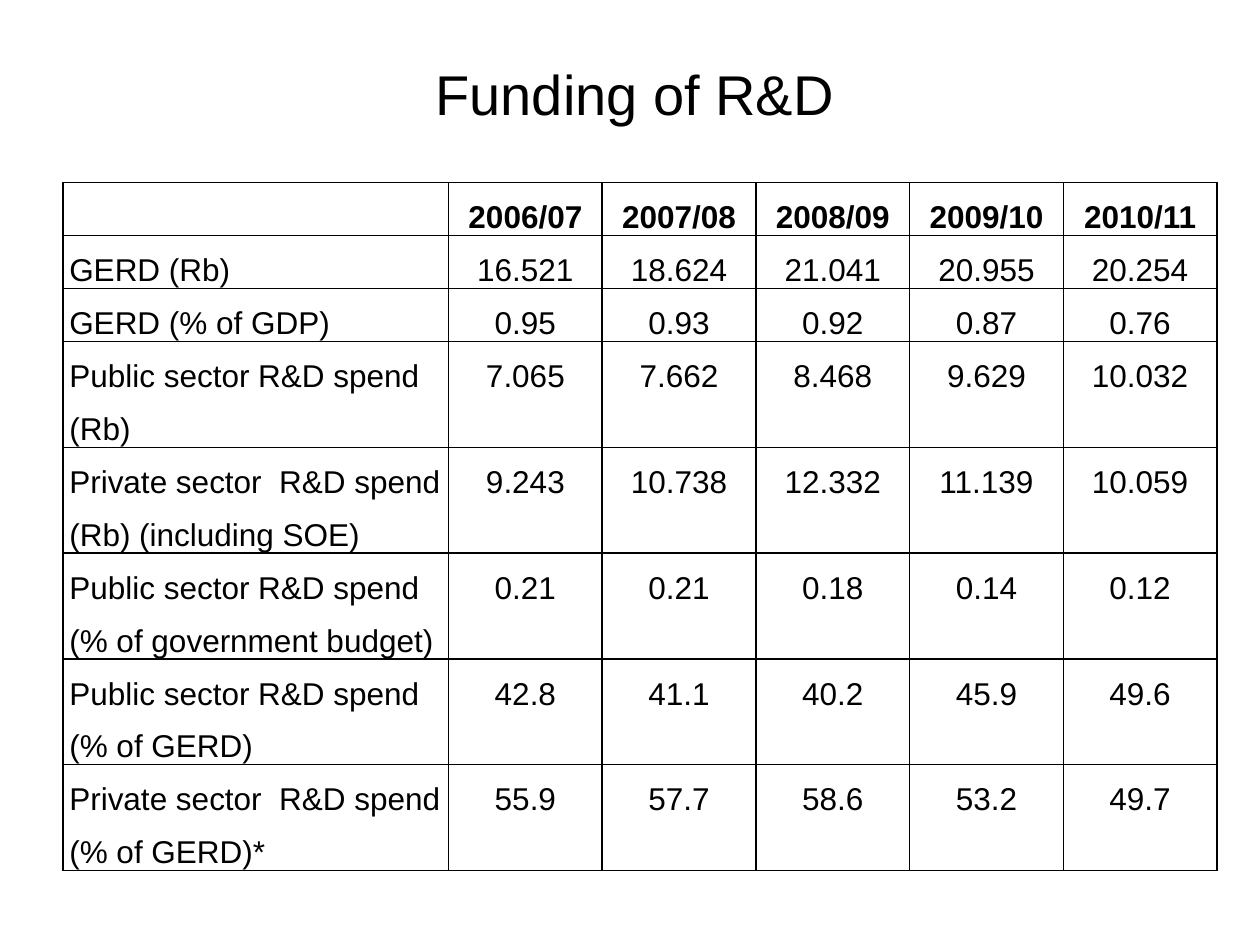
import dataclasses

import lxml.etree
import pptx
import pptx.dml.color
import pptx.enum.text
import pptx.oxml.ns
import pptx.util

Inches = pptx.util.Inches
Pt = pptx.util.Pt
ALIGN = pptx.enum.text.PP_ALIGN


@dataclasses.dataclass(frozen=True)
class Theme:
    font: str = "Arial"
    ink: str = "000000"
    paper: str = "FFFFFF"
    title_size: int = 32
    cell_size: int = 18
    cell_spacing: float = 1.5
    border: float = 1


def rgb(value):
    return pptx.dml.color.RGBColor.from_string(value)


def write(tf, text, *, font, size, color, bold=False, align=ALIGN.LEFT, spacing=None):
    """Put one formatted paragraph into a text frame."""
    p = tf.paragraphs[0]
    p.alignment = align
    p.line_spacing = spacing
    r = p.add_run()
    r.text = text
    r.font.name = font
    r.font.size = Pt(size)
    r.font.bold = bold
    r.font.color.rgb = rgb(color)


class SlideBuilder:
    def __init__(self, slide, theme):
        self.slide = slide
        self.theme = theme
        slide.background.fill.solid()
        slide.background.fill.fore_color.rgb = rgb(theme.paper)

    def title(self, text, left, top, width, height):
        sp = self.slide.shapes.title
        sp.left, sp.top = Inches(left), Inches(top)
        sp.width, sp.height = Inches(width), Inches(height)
        tf = sp.text_frame
        tf.word_wrap = True
        tf.auto_size = pptx.enum.text.MSO_AUTO_SIZE.NONE
        tf.vertical_anchor = pptx.enum.text.MSO_ANCHOR.MIDDLE
        write(tf, text, font=self.theme.font, size=self.theme.title_size,
              color=self.theme.ink, align=ALIGN.CENTER)

    def borders(self, cell):
        """Draw all four sides; line elements come before the cell fill."""
        qn = pptx.oxml.ns.qn
        props = cell._tc.get_or_add_tcPr()
        for i, side in enumerate(("a:lnL", "a:lnR", "a:lnT", "a:lnB")):
            line = lxml.etree.Element(qn(side), w=str(Pt(self.theme.border)))
            fill = lxml.etree.SubElement(line, qn("a:solidFill"))
            lxml.etree.SubElement(fill, qn("a:srgbClr"), val=self.theme.ink)
            props.insert(i, line)

    def cell(self, cell, text, is_header, is_label):
        cell.margin_left = cell.margin_right = Inches(0.05)
        cell.margin_top = cell.margin_bottom = 0
        if is_label:
            cell.fill.solid()
            cell.fill.fore_color.rgb = rgb(self.theme.paper)
        else:
            cell.fill.background()
        write(cell.text_frame, text, font=self.theme.font,
              size=self.theme.cell_size, color=self.theme.ink, bold=is_header,
              align=ALIGN.LEFT if is_label else ALIGN.CENTER,
              spacing=self.theme.cell_spacing)
        self.borders(cell)

    def table(self, rows, left, top, col_widths, row_heights):
        table = self.slide.shapes.add_table(
            len(rows), len(col_widths), Inches(left), Inches(top),
            Inches(sum(col_widths)), Inches(sum(row_heights))).table
        table.first_row = table.horz_banding = False
        for column, width in zip(table.columns, col_widths):
            column.width = Inches(width)
        for i, (row, height) in enumerate(zip(rows, row_heights)):
            table.rows[i].height = Inches(height)
            for j, text in enumerate(row):
                self.cell(table.cell(i, j), text, i == 0, j == 0)


FUNDING = [
    ("", "2006/07", "2007/08", "2008/09", "2009/10", "2010/11"),
    ("GERD (Rb)", "16.521", "18.624", "21.041", "20.955", "20.254"),
    ("GERD (% of GDP)", "0.95", "0.93", "0.92", "0.87", "0.76"),
    ("Public sector R&D spend (Rb)",
     "7.065", "7.662", "8.468", "9.629", "10.032"),
    ("Private sector  R&D spend (Rb) (including SOE)",
     "9.243", "10.738", "12.332", "11.139", "10.059"),
    ("Public sector R&D spend (% of government budget)",
     "0.21", "0.21", "0.18", "0.14", "0.12"),
    ("Public sector R&D spend (% of GERD)",
     "42.8", "41.1", "40.2", "45.9", "49.6"),
    ("Private sector  R&D spend (% of GERD)*",
     "55.9", "57.7", "58.6", "53.2", "49.7"),
]


def main():
    prs = pptx.Presentation()
    prs.slide_width, prs.slide_height = Inches(10), Inches(7.5)
    title_only = prs.slide_layouts[5]
    s = SlideBuilder(prs.slides.add_slide(title_only), Theme())

    # Funding table: one label column, five years; two-line rows are taller
    s.table(FUNDING, 0.5, 1.45, [3.06] + [1.22] * 5, [0.39] * 3 + [0.84] * 5)

    # Heading
    s.title("Funding of R&D", 1.58, 0.42, 6.92, 0.64)

    prs.save("out.pptx")


if __name__ == "__main__":
    main()
